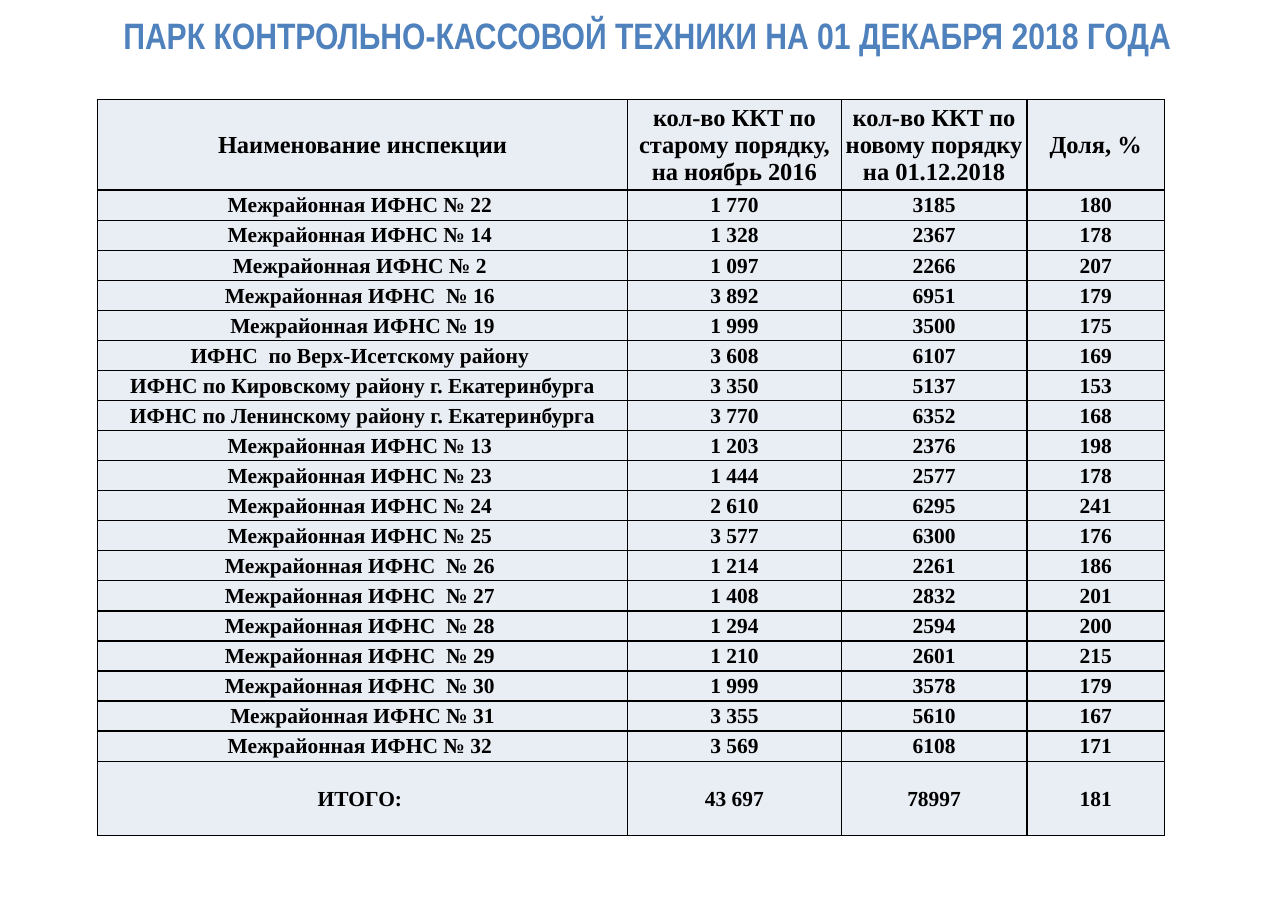
from lxml import etree
from pptx import Presentation
from pptx import util as u
from pptx.dml.color import RGBColor
from pptx.enum import text
from pptx.oxml import ns

BLUE = RGBColor(0x4F, 0x81, 0xBD)
PALE = RGBColor(0xE9, 0xED, 0xF4)
BLACK = RGBColor(0, 0, 0)

COL_WIDTHS = [346.3, 139.7, 121.3, 89.9]
HEADER_H, ROW_H, TOTAL_H = 59.1, 19.67, 48.7
ROWS = [
    ("Наименование инспекции", "кол-во ККТ по старому порядку, на ноябрь 2016",
     "кол-во ККТ по новому порядку на 01.12.2018", "Доля, %"),
    ("Межрайонная ИФНС № 22 ", "1 770", "3185", "180"),
    ("Межрайонная ИФНС № 14 ", "1 328", "2367", "178"),
    ("Межрайонная ИФНС № 2 ", "1 097", "2266", "207"),
    ("Межрайонная ИФНС  № 16 ", "3 892", "6951", "179"),
    ("Межрайонная ИФНС № 19", "1 999", "3500", "175"),
    ("ИФНС  по Верх-Исетскому району ", "3 608", "6107", "169"),
    ("ИФНС по Кировскому району г. Екатеринбурга", "3 350", "5137", "153"),
    ("ИФНС по Ленинскому району г. Екатеринбурга", "3 770", "6352", "168"),
    ("Межрайонная ИФНС № 13 ", "1 203", "2376", "198"),
    ("Межрайонная ИФНС № 23 ", "1 444", "2577", "178"),
    ("Межрайонная ИФНС № 24 ", "2 610", "6295", "241"),
    ("Межрайонная ИФНС № 25 ", "3 577", "6300", "176"),
    ("Межрайонная ИФНС  № 26 ", "1 214", "2261", "186"),
    ("Межрайонная ИФНС  № 27 ", "1 408", "2832", "201"),
    ("Межрайонная ИФНС  № 28 ", "1 294", "2594", "200"),
    ("Межрайонная ИФНС  № 29 ", "1 210", "2601", "215"),
    ("Межрайонная ИФНС  № 30 ", "1 999", "3578", "179"),
    ("Межрайонная ИФНС № 31", "3 355", "5610", "167"),
    ("Межрайонная ИФНС № 32 ", "3 569", "6108", "171"),
    ("ИТОГО: ", "43 697", "78997", "181"),
]


def write(p, words, align, color, **font):
    p.alignment = align
    r = p.add_run()
    r.text = words
    r.font.color.rgb = color
    for name, value in font.items():
        setattr(r.font, name, value)


def add_borders(cell):
    tcPr = cell._tc.get_or_add_tcPr()
    for i, side in enumerate(("lnL", "lnR", "lnT", "lnB")):
        ln = etree.Element(ns.qn("a:" + side), w=str(u.Pt(1)))
        fill = etree.SubElement(ln, ns.qn("a:solidFill"))
        etree.SubElement(fill, ns.qn("a:srgbClr"), val=str(BLACK))
        tcPr.insert(i, ln)


prs = Presentation()
prs.slide_width, prs.slide_height = u.Pt(841.68), u.Pt(595.44)
s = prs.slides.add_slide(prs.slide_layouts[5])

# Title
title = s.shapes.title
box = {"left": 80.6, "top": 5.8, "width": 702.7, "height": 33.8}
for name, value in box.items():
    setattr(title, name, u.Pt(value))
tf = title.text_frame
frame = {"margin_left": 0, "margin_right": 0, "margin_top": 0, "margin_bottom": 0,
         "word_wrap": True, "auto_size": text.MSO_AUTO_SIZE.NONE,
         "vertical_anchor": text.MSO_ANCHOR.MIDDLE}
for name, value in frame.items():
    setattr(tf, name, value)
write(tf.paragraphs[0], "ПАРК КОНТРОЛЬНО-КАССОВОЙ ТЕХНИКИ НА 01 ДЕКАБРЯ 2018 ГОДА",
      text.PP_ALIGN.JUSTIFY, BLUE, name="Arial Narrow", size=u.Pt(24), bold=True)

# Table grid
heights = [HEADER_H] + [ROW_H] * (len(ROWS) - 2) + [TOTAL_H]
table = s.shapes.add_table(len(ROWS), len(COL_WIDTHS), u.Pt(63.8), u.Pt(65.2),
                           u.Pt(sum(COL_WIDTHS)), u.Pt(sum(heights))).table
for col, width in zip(table.columns, COL_WIDTHS):
    col.width = u.Pt(width)
for row, height in zip(table.rows, heights):
    row.height = u.Pt(height)

# Table cells
cell_format = {"margin_left": u.Pt(0.7), "margin_right": u.Pt(0.7),
               "margin_top": u.Pt(0.7), "margin_bottom": 0,
               "vertical_anchor": text.MSO_ANCHOR.MIDDLE}
for i, values in enumerate(ROWS):
    for j, value in enumerate(values):
        cell = table.cell(i, j)
        for name, setting in cell_format.items():
            setattr(cell, name, setting)
        cell.fill.solid()
        cell.fill.fore_color.rgb = PALE
        add_borders(cell)
        write(cell.text_frame.paragraphs[0], value, text.PP_ALIGN.CENTER, BLACK,
              name="Times New Roman", size=u.Pt(14 if i else 16), bold=True)

prs.save("out.pptx")
